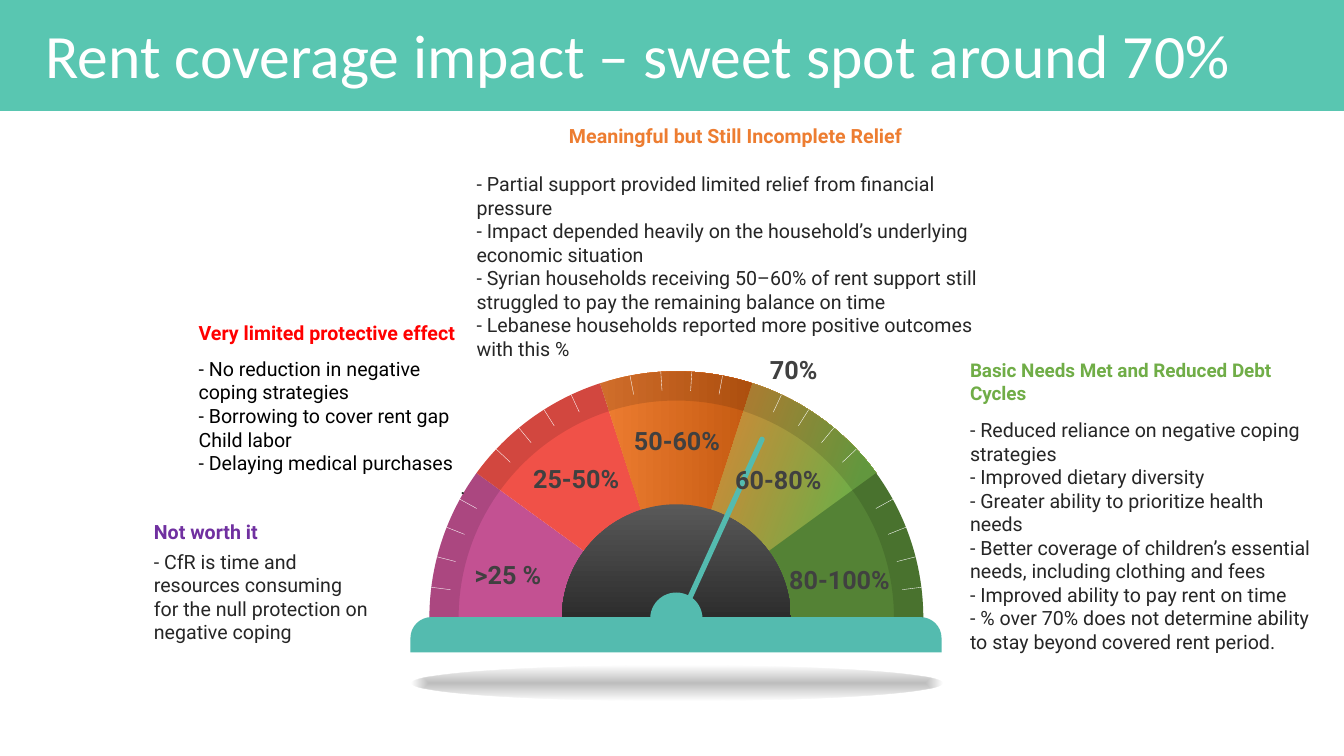
"""Build the rent coverage gauge slide."""
from dataclasses import dataclass
from math import cos, radians, sin, tan

from lxml.etree import SubElement
from pptx import Presentation
from pptx.dml.color import RGBColor
from pptx.enum.shapes import MSO_CONNECTOR as Connector, MSO_SHAPE as Preset
from pptx.enum.text import MSO_ANCHOR as Anchor, PP_ALIGN as Align
from pptx.oxml.ns import qn
from pptx.util import Pt

rgb = RGBColor.from_string


@dataclass(frozen=True)
class Theme:
    header: str = "59C6B1"
    teal: str = "54BBAF"
    white: str = "FFFFFF"
    black: str = "000000"
    ink: str = "262626"
    label: str = "404040"
    shade: str = "808080"
    hub: str = "595959"
    purple: str = "7030A0"
    magenta: str = "C35192"
    red: str = "FF0000"
    coral: str = "F05148"
    orange: str = "ED7D31"
    rust: str = "C55A11"
    green: str = "70AD47"
    forest: str = "548235"
    title_font: str = "Calibri"
    body_font: str = "Roboto"
    title_size: float = 44
    label_size: float = 18
    body_size: float = 14
    small_size: float = 13.5


theme = Theme()
center_x, center_y, outer, inner, hub_radius = 483.1, 441.6, 176.4, 155.5, 81.8
base_left, base_right, base_top, base_bottom, corner = 293.2, 672.6, 440.8, 466, 15


def arc(radius, start, end, x=center_x, y=center_y, pieces=1):
    """Return points of a circular arc as (x, y, is_control) in Bezier order."""
    step = radians(end - start) / pieces
    reach = 4 / 3 * tan(step / 4)
    points = []
    for i in range(pieces + 1):
        angle = radians(start) + i * step
        along, up = cos(angle), sin(angle)
        trio = [(along + reach * up, up - reach * along, True), (along, up, False),
                (along - reach * up, up + reach * along, True)]
        points += trio[(i == 0):(2 if i == pieces else 3)]
    return [(Pt(x + radius * h), Pt(y - radius * v), control) for h, v, control in points]


def write(place, lines, font, size, color, bold=False, align=Align.LEFT,
          anchor=Anchor.TOP, margins=(0, 0)):
    """Add a text box with one paragraph per line."""
    box = slide.shapes.add_textbox(*map(Pt, place))
    frame = box.text_frame
    frame.word_wrap = True
    frame.vertical_anchor = anchor
    frame.margin_left = frame.margin_right = Pt(margins[0])
    frame.margin_top = frame.margin_bottom = Pt(margins[1])
    frame.text = "\n".join(lines)
    for para in frame.paragraphs:
        para.alignment = align
        for span in para.runs:
            span.font.name, span.font.size, span.font.bold = font, Pt(size), bold
            span.font.color.rgb = rgb(color)
    return frame


deck = Presentation()
deck.slide_width, deck.slide_height = Pt(960), Pt(540)
slide = deck.slides.add_slide(deck.slide_layouts[6])

header = slide.shapes.add_shape(Preset.RECTANGLE, 0, 0, Pt(960), Pt(78.5))
header.shadow.inherit = False
header.fill.solid()
header.fill.fore_color.rgb = header.line.color.rgb = rgb(theme.header)
header.line.width = Pt(2)
write((32.4, 10.3, 864, 56.2), ["Rent coverage impact – sweet spot around 70%"],
      theme.title_font, theme.title_size, theme.white,
      anchor=Anchor.MIDDLE, margins=(0, 5))

ground = slide.shapes.add_shape(Preset.OVAL, Pt(293.8), Pt(475.2), Pt(379.4), Pt(25.2))
ground.shadow.inherit = False
ground.line.fill.background()
ground.fill.gradient()
for stop in ground.fill.gradient_stops:
    stop.color.rgb = rgb(theme.shade)
gradient = ground._element.spPr.find(qn("a:gradFill"))
for tint, opacity in zip(gradient.iter(qn("a:srgbClr")), (52, 0)):
    SubElement(tint, qn("a:alpha"), val=str(opacity * 1000))
gradient.remove(gradient.find(qn("a:lin")))
focus = SubElement(gradient, qn("a:path"), path="shape")
SubElement(focus, qn("a:fillToRect"), l="50000", t="50000", r="50000", b="50000")

sector_fills = [
    ((theme.magenta,), 0, 1),
    ((theme.coral,), 0, 1),
    ((theme.orange, theme.rust), 0, 1),
    ((theme.orange, theme.green), 340, 0.77),
    ((theme.forest,), 0, 1),
]
sweep = 180 / len(sector_fills)
pivot_point = (Pt(center_x), Pt(center_y), False)
outlines = [
    ([pivot_point] + arc(outer, 180 - i * sweep, 180 - (i + 1) * sweep, pieces=1 + (i == 2)),
     *fill, 100)
    for i, fill in enumerate(sector_fills)
]
hub_floor = [(Pt(center_x + side * hub_radius), Pt(452), False) for side in (1, -1)]
base_floor = [(Pt(x), Pt(base_bottom), False) for x in (base_right, base_left)]
base_points = (
    arc(corner, 180, 90, base_left + corner, base_top + corner)
    + arc(corner, 90, 0, base_right - corner, base_top + corner)
    + base_floor
)
outlines += [
    (arc(outer, 180, 0, pieces=2) + arc(inner, 0, 180, pieces=2), (theme.black,), 0, 1, 12),
    (arc(hub_radius, 180, 0, y=442, pieces=2) + hub_floor, (theme.hub, theme.ink), 270, 1, 100),
    (base_points, (theme.teal,), 0, 1, 100),
]
for points, colors, angle, last_stop, opacity in outlines:
    builder = slide.shapes.build_freeform(*points[0][:2], scale=1.0)
    builder.add_line_segments([point[:2] for point in points[1:]], close=True)
    piece = builder.convert_to_shape()
    segments = list(piece._element.spPr.iter(qn("a:lnTo")))
    controls = [i for i, point in enumerate(points[1:]) if point[2]]
    for i in controls[::2]:
        segments[i].tag = qn("a:cubicBezTo")
        for follower in segments[i + 1:i + 3]:
            segments[i].append(follower[0])
            follower.getparent().remove(follower)
    piece.shadow.inherit = False
    piece.line.fill.background()
    if len(colors) == 1:
        piece.fill.solid()
        piece.fill.fore_color.rgb = rgb(colors[0])
    else:
        piece.fill.gradient()
        piece.fill.gradient_angle = angle
        for stop, color, position in zip(piece.fill.gradient_stops, colors, (0, last_stop)):
            stop.color.rgb = rgb(color)
            stop.position = position
    if opacity < 100:
        tint = next(piece._element.spPr.iter(qn("a:srgbClr")))
        SubElement(tint, qn("a:alpha"), val=str(opacity * 1000))

ticks_per_sector = 5
tick_count = ticks_per_sector * len(sector_fills)
for i in range(tick_count):
    if i % ticks_per_sector:
        rim, tip = (arc(radius, 180 - 180 * i / tick_count, 0)[0][:2]
                    for radius in (outer, 162.7))
        tick = slide.shapes.add_connector(Connector.STRAIGHT, *rim, *tip)
        tick.line.color.rgb = rgb(theme.white)
        tick.line.width = Pt(0.25)
        SubElement(tick._element.spPr, qn("a:effectLst"))

for preset, place, rotation in [
    (Preset.OVAL, (464.4, 423.2, 37.4, 37.4), 0),
    (Preset.ROUNDED_RECTANGLE, (449.3, 371.8, 135.4, 3.8), 114.5),
]:
    part = slide.shapes.add_shape(preset, *map(Pt, place))
    part.shadow.inherit = False
    part.fill.solid()
    part.fill.fore_color.rgb = rgb(theme.teal)
    part.line.fill.background()
    part.rotation = rotation
    if preset == Preset.ROUNDED_RECTANGLE:
        part.adjustments[0] = 0.5

notes = [
    ("Meaningful but Still Incomplete Relief", (340.4, 82.1, 370.1, 30.2), theme.orange,
     theme.body_size, Align.CENTER, (340.4, 122.9, 370.1, 58.3), theme.ink, [
         "- Partial support provided limited relief from financial pressure",
         "- Impact depended heavily on the household’s underlying economic situation",
         "- Syrian households receiving 50–60% of rent support still struggled to pay "
         "the remaining balance on time",
         "- Lebanese households reported more positive outcomes with this %"]),
    ("Very limited protective effect", (141.8, 227.5, 190.8, 20.2), theme.red,
     theme.body_size, Align.LEFT, (141.8, 254.9, 190.8, 39.6), theme.black, [
         "- No reduction in negative coping strategies",
         "- Borrowing to cover rent gap",
         "Child labor",
         "- Delaying medical purchases",
         "."]),
    ("Basic Needs Met and Reduced Debt Cycles", (692.9, 265.2, 244.8, 14.4), theme.green,
     theme.small_size, Align.LEFT, (692.9, 298.6, 244.8, 28.8), theme.ink, [
         "- Reduced reliance on negative coping strategies",
         "- Improved dietary diversity",
         "- Greater ability to prioritize health needs",
         "- Better coverage of children’s essential needs, including clothing and fees",
         "- Improved ability to pay rent on time",
         "- % over 70% does not determine ability to stay beyond covered rent period."]),
    ("Not worth it", (109.9, 372.6, 153.4, 14.4), theme.purple,
     theme.body_size, Align.LEFT, (109.9, 392.7, 153.4, 28.8), theme.ink, [
         "- CfR is time and resources consuming for the null protection on negative coping"]),
]
for heading, heading_place, color, size, align, place, ink, lines in notes:
    write(heading_place, [heading], theme.body_font, size, color, True, align, Anchor.MIDDLE)
    frame = write(place, lines, theme.body_font, theme.body_size, ink)
    if lines[-1] == ".":
        frame.paragraphs[-1].alignment = Align.RIGHT
        frame.paragraphs[-1].runs[0].font.color.rgb = rgb(theme.ink)

for label, left, top, width in [
    ("70%", 542.9, 249.6, 58.3),
    (">25 %", 331.9, 396, 72.7),
    ("25-50%", 373.7, 327.6, 87.8),
    ("50-60%", 445.7, 300.2, 79.9),
    ("80-100%", 556.6, 399.6, 92.9),
    ("60-80%", 518.1, 328.3, 79.9),
]:
    write((left, top, width, 28.8), [label], theme.body_font, theme.label_size,
          theme.label, True, margins=(7.2, 3.6))

deck.save("out.pptx")
